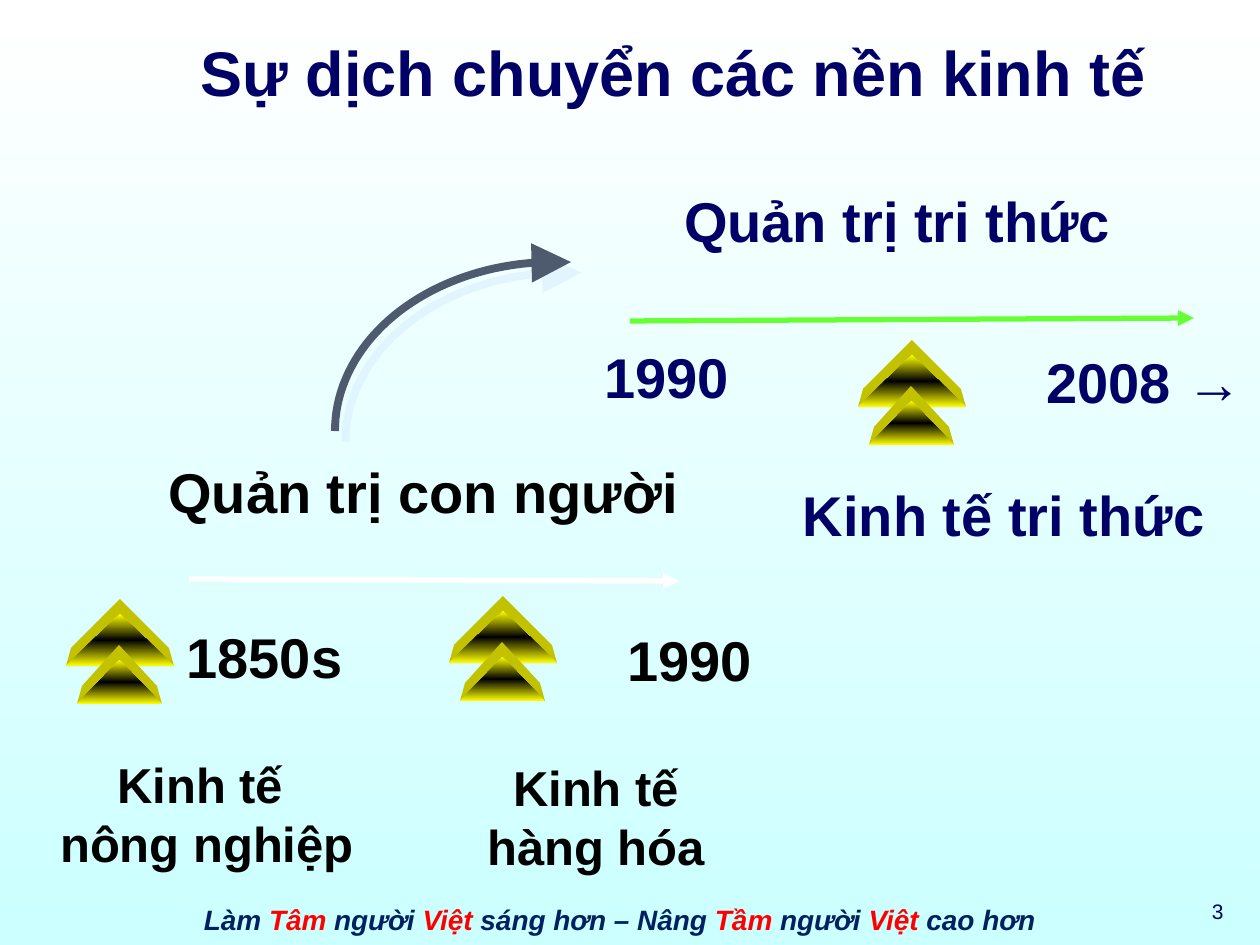
from copy import deepcopy
from dataclasses import dataclass
from math import cos, pi, sin

from lxml.etree import SubElement
from pptx import Presentation
from pptx.dml.color import RGBColor
from pptx.enum.shapes import MSO_CONNECTOR, MSO_SHAPE
from pptx.enum.text import MSO_ANCHOR, PP_ALIGN
from pptx.oxml.ns import qn
from pptx.util import Pt

SCALE = 914400 / 126  # EMU per px


@dataclass(frozen=True)
class Theme:
    font: str = "Arial"
    navy: str = "000066"
    black: str = "000000"
    white: str = "FFFFFF"
    aqua: str = "CCFFFF"
    footer: str = "002060"
    red: str = "FF0000"
    green: str = "66FF33"
    slate: str = "4E5B6F"
    shade: str = "D6ECFF"
    gold: str = "C2C200"
    yellow: str = "FFFF00"
    title_size: int = 36
    label_size: int = 32
    economy_size: int = 28
    footer_size: int = 16
    number_size: int = 12


THEME = Theme()


@dataclass(frozen=True)
class Label:
    spans: tuple[tuple[str, str], ...]  # text and colour
    left: int
    top: int
    width: int
    height: int
    size: int = THEME.label_size
    bold: bool = True
    italic: bool = False
    wrap: bool = False
    align: PP_ALIGN = PP_ALIGN.CENTER
    anchor: MSO_ANCHOR = MSO_ANCHOR.TOP
    spacing: float = 1.0


@dataclass(frozen=True)
class Arrow:
    start: tuple[int, int]
    end: tuple[int, int]
    colour: str


@dataclass(frozen=True)
class Peak:
    left: int
    top: int
    width: int
    height: int


def emu(px: float) -> int:
    return round(px * SCALE)


def rgb(colour: str) -> RGBColor:
    return RGBColor.from_string(colour)


def set_all(target, values: dict) -> None:
    for name, value in values.items():
        setattr(target, name, value)


def paint_gradient(element, fill, colours: tuple[str, ...]) -> None:
    """Vertical gradient with evenly spaced stops."""
    fill.gradient()
    fill.gradient_angle = 270
    stop_list = element.xpath(".//a:gsLst")[0]
    while len(stop_list) < len(colours):
        stop_list.append(deepcopy(stop_list[-1]))
    for index, (stop, colour) in enumerate(zip(fill.gradient_stops, colours)):
        stop.position = index / (len(colours) - 1)
        stop.color.rgb = rgb(colour)


def add_label(page, label: Label) -> None:
    box = page.shapes.add_textbox(*map(emu, (label.left, label.top, label.width, label.height)))
    set_all(box.text_frame, {"word_wrap": label.wrap, "vertical_anchor": label.anchor})
    para = box.text_frame.paragraphs[0]
    set_all(para, {"alignment": label.align, "line_spacing": label.spacing})
    for index, (text, colour) in enumerate(label.spans):
        for part, line in enumerate(text.split("\n")):
            if part:
                para.add_line_break()
            span = para.add_run()
            span.text = line
            set_all(span.font, {"name": THEME.font, "size": Pt(label.size),
                                "bold": label.bold, "italic": label.italic})
            span.font.color.rgb = rgb(colour)


def style_arrow(line, colour: str, width: float, head: str) -> None:
    line.color.rgb = rgb(colour)
    line.width = Pt(width)
    outline = line._get_or_add_ln()
    SubElement(outline, qn("a:tailEnd"), type="triangle", w=head, len=head)


def add_arrow(page, arrow: Arrow) -> None:
    line = page.shapes.add_connector(
        MSO_CONNECTOR.STRAIGHT, *map(emu, arrow.start + arrow.end))
    style_arrow(line.line, arrow.colour, 3, "med")
    SubElement(line._element.spPr, qn("a:effectLst"))


def add_peak(page, peak: Peak) -> None:
    """Gold roof with a shaded triangle in front."""
    right, base = peak.left + peak.width, peak.top + peak.height
    shoulder = base - 18
    roof_points = [(right - 5, shoulder), (right, base), (peak.left, base),
                   (peak.left + 5, shoulder)]
    builder = page.shapes.build_freeform(peak.left + peak.width // 2, peak.top - 15, scale=SCALE)
    builder.add_line_segments(roof_points, close=True)
    roof = builder.convert_to_shape()
    roof.fill.solid()
    roof.fill.fore_color.rgb = rgb(THEME.gold)
    face = page.shapes.add_shape(
        MSO_SHAPE.ISOSCELES_TRIANGLE, *map(emu, (peak.left, peak.top, peak.width, peak.height)))
    paint_gradient(face._element, face.fill, (THEME.yellow, THEME.black, THEME.yellow))
    for shape in (roof, face):
        shape.line.fill.background()
        shape.shadow.inherit = False


def add_double_peak(page, left: int, top: int) -> None:
    add_peak(page, Peak(left, top, 108, 52))
    add_peak(page, Peak(left + 11, top + 46, 85, 44))


def add_curve(page) -> None:
    """Quarter ellipse rising to the right, ending in a short level run."""
    centre_x, base, radius_x, radius_y, steps = 554, 431, 219, 169, 40
    angles = [pi / 2 * step / steps for step in range(steps + 1)]
    points = [(centre_x - radius_x * cos(a), base - radius_y * sin(a)) for a in angles]
    builder = page.shapes.build_freeform(*map(emu, points[0]))
    builder.add_line_segments(
        [(emu(x), emu(y)) for x, y in points[1:] + [(571, 262)]], close=False)
    curve = builder.convert_to_shape()
    curve.fill.background()
    style_arrow(curve.line, THEME.slate, 4.5, "lg")
    curve.shadow.inherit = False
    effects = curve._element.spPr.find(qn("a:effectLst"))
    shadow = SubElement(effects, qn("a:outerShdw"), dist=str(Pt(8.5)), dir="2700000",
                        algn="ctr", rotWithShape="0")
    tint = SubElement(shadow, qn("a:srgbClr"), val=THEME.shade)
    SubElement(tint, qn("a:alpha"), val="50000")


NAVY, BLACK, DARK, RED = THEME.navy, THEME.black, THEME.footer, THEME.red
MOTTO = (("Làm ", DARK), ("Tâm ", RED), ("người ", DARK), ("Việt", RED),
         (" sáng hơn – Nâng ", DARK), ("Tầm", RED), (" người ", DARK),
         ("Việt", RED), (" cao hơn", DARK))

LABELS = (
    Label(MOTTO, 63, 896, 1113, 47, THEME.footer_size, italic=True, wrap=True),
    Label((("Sự dịch chuyển các nền kinh tế", NAVY),), 150, 19, 1047, 118, THEME.title_size,
          wrap=True, anchor=MSO_ANCHOR.MIDDLE, spacing=0.8),
    Label((("3", NAVY),), 1102, 892, 134, 42, THEME.number_size, bold=False, wrap=True,
          align=PP_ALIGN.RIGHT),
    # Knowledge economy
    Label((("Quản trị tri thức", NAVY),), 670, 180, 455, 81),
    Label((("Kinh tế tri thức", NAVY),), 789, 474, 430, 81),
    Label((("2008 →", NAVY),), 1029, 341, 231, 81, wrap=True),
    Label((("1990", NAVY),), 591, 336, 151, 81),
    # Farming and goods economies
    Label((("Quản trị con người", BLACK),), 154, 451, 539, 81),
    Label((("Kinh tế \nnông nghiệp", BLACK),), 25, 748, 364, 131, THEME.economy_size, wrap=True),
    Label((("Kinh tế\nhàng hóa", BLACK),), 399, 751, 394, 131, THEME.economy_size, wrap=True),
    Label((("1990", BLACK),), 614, 619, 151, 81),
    Label((("1850s", BLACK),), 173, 616, 183, 81),
)
ARROWS = (
    Arrow((630, 321), (1194, 318), THEME.green),
    Arrow((189, 579), (679, 581), THEME.white),
)
DOUBLE_PEAKS = ((858, 355), (66, 614), (449, 611))


def main() -> None:
    deck = Presentation()
    set_all(deck, {"slide_width": emu(1260), "slide_height": emu(945)})
    page = deck.slides.add_slide(deck.slide_layouts[6])
    paint_gradient(page._element, page.background.fill, (THEME.white, THEME.aqua))
    for arrow in ARROWS:
        add_arrow(page, arrow)
    for left, top in DOUBLE_PEAKS:
        add_double_peak(page, left, top)
    for label in LABELS:
        add_label(page, label)
    add_curve(page)
    deck.save("out.pptx")


if __name__ == "__main__":
    main()
